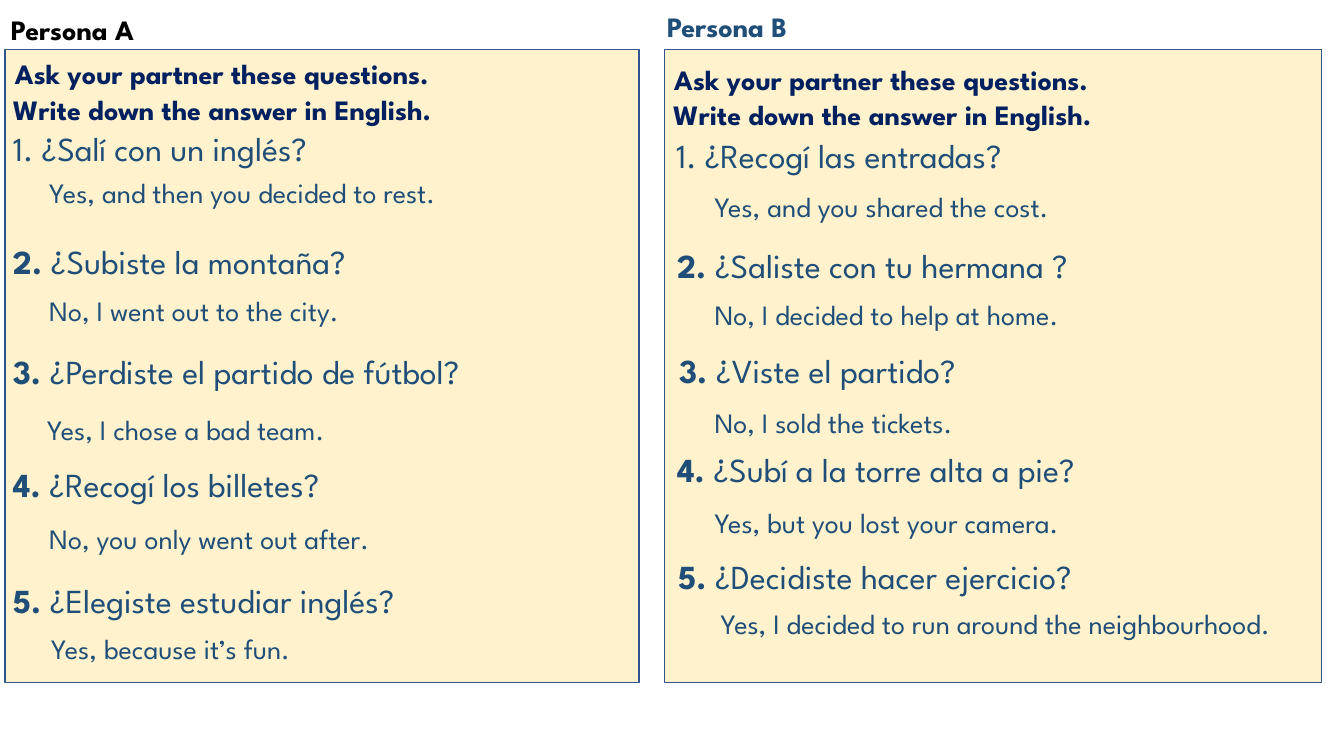
"""Build a two-card Spanish speaking activity for Persona A and Persona B."""
from pptx import Presentation
from pptx.dml.color import RGBColor
from pptx.enum.shapes import MSO_SHAPE
from pptx.enum.text import MSO_ANCHOR
from pptx.util import Pt

FONT = "League Spartan"
COLORS = {"card": "FFF2CC", "border": "325491", "navy": "002060",
          "blue": "1F4E79", "black": "000000"}
CARD_TOP, CARD_HEIGHT = 35.3, 452.2

PERSONAS = [
    {
        "card": (3.6, 452.9),
        "title": ("Persona A", "black", (0.7, 7.2, 129, 31)),
        "instructions": [(3.6, 36), (2.2, 56.2)],
        "rows": [
            ("¿Salí con un inglés?", 2.2, 87.8,
             "Yes, and then you decided to rest.", 28.1, 121.7),
            ("¿Subiste la montaña?", 2.2, 168.5,
             "No, I went out to the city.", 28.1, 205.9),
            ("¿Perdiste el partido de fútbol?", 2.2, 247,
             "Yes, I chose a bad team.", 26.6, 290.9),
            ("¿Recogí los billetes?", 2.2, 327.6,
             "No, you only went out after.", 28.1, 368.6),
            ("¿Elegiste estudiar inglés?", 2.2, 410.4,
             "Yes, because it’s fun.", 29.5, 447.8),
        ],
    },
    {
        "card": (474.5, 469.4),
        "title": ("Persona B", "blue", (469.4, -0.7, 134, 41.8)),
        "instructions": [(474.5, 40.3), (473.8, 59.8)],
        "rows": [
            ("¿Recogí las entradas?", 475.9, 92.9,
             "Yes, and you shared the cost.", 503.3, 131.8),
            ("¿Saliste con tu hermana ?", 476.6, 171.4,
             "No, I decided to help at home.", 503.3, 208.8),
            ("¿Viste el partido?", 478.1, 246.2,
             "No, I sold the tickets.", 503.3, 285.8),
            ("¿Subí a la torre alta a pie?", 476.6, 316.8,
             "Yes, but you lost your camera.", 503.3, 357.8),
            ("¿Decidiste hacer ejercicio?", 477.4, 393.8,
             "Yes, I decided to run around the neighbourhood.", 507.6, 429.8),
        ],
    },
]
INSTRUCTIONS = [("Ask your partner these questions.", 452, 28),
                ("Write down the answer in English.", 405, 39)]


def rgb(name):
    return RGBColor.from_string(COLORS[name])


def add_text(s, box, runs, size, color, spacing=1.0, anchor=MSO_ANCHOR.TOP):
    tf = s.shapes.add_textbox(*map(Pt, box)).text_frame
    tf.word_wrap = True
    tf.vertical_anchor = anchor
    p = tf.paragraphs[0]
    p.line_spacing = spacing
    for text, bold in runs:
        r = p.add_run()
        r.text = text
        r.font.name = FONT
        r.font.size = Pt(size)
        r.font.bold = bold
        r.font.color.rgb = rgb(color)


prs = Presentation()
prs.slide_width, prs.slide_height = Pt(960), Pt(540)
s = prs.slides.add_slide(prs.slide_layouts[6])

for persona in PERSONAS:
    left, width = persona["card"]
    card = s.shapes.add_shape(MSO_SHAPE.RECTANGLE, Pt(left), Pt(CARD_TOP),
                              Pt(width), Pt(CARD_HEIGHT))
    card.shadow.inherit = False
    card.fill.solid()
    card.fill.fore_color.rgb = rgb("card")
    card.line.color.rgb = rgb("border")
    card.line.width = Pt(1)

    title, color, box = persona["title"]
    add_text(s, box, [(title, True)], 20, color, 0.9, MSO_ANCHOR.MIDDLE)

    for (text, width, height), (left, top) in zip(INSTRUCTIONS, persona["instructions"]):
        add_text(s, (left, top, width, height), [(text, True)], 20, "navy",
                 1.2, MSO_ANCHOR.MIDDLE)

    for number, row in enumerate(persona["rows"], 1):
        question, q_left, q_top, answer, a_left, a_top = row
        runs = [(f"{number}. ", number > 1), (question, False)]
        add_text(s, (q_left, q_top, 452, 36), runs, 24, "blue")
        add_text(s, (a_left, a_top, 420, 31.5), [(answer, False)], 20, "blue")

prs.save("out.pptx")
